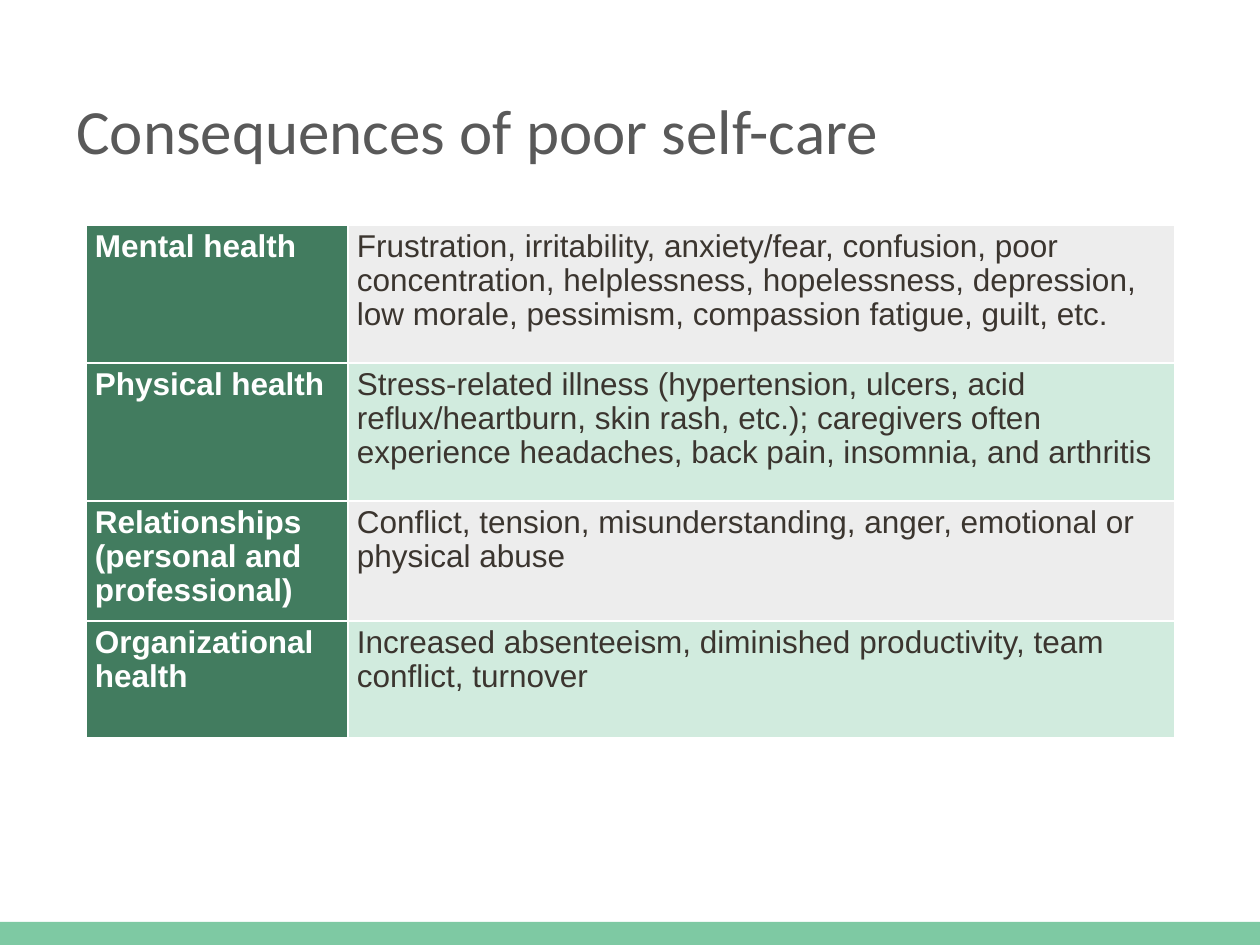
from dataclasses import dataclass

from lxml.etree import SubElement
from pptx import Presentation
from pptx.dml.color import RGBColor
from pptx.enum.shapes import MSO_SHAPE
from pptx.enum.text import MSO_ANCHOR
from pptx.oxml.ns import qn
from pptx.util import Emu, Pt

EMU_PER_PX = 914400 // 126


@dataclass(frozen=True)
class Theme:
    """Colours, fonts and type sizes of the slide."""
    band: str = "7EC9A3"
    title: str = "595959"
    label_fill: str = "427C5F"
    label_text: str = "FFFFFF"
    body_text: str = "3B352F"
    row_fills: tuple = ("EDEDED", "D1EBDE")
    border: str = "FFFFFF"
    title_font: str = "Calibri"
    table_font: str = "Arial"
    title_size: int = 36
    table_size: int = 18
    border_width: float = 1.5


THEME = Theme()
CONSEQUENCES = [
    ("Mental health",
     ["Frustration, irritability, anxiety/fear, confusion, poor concentration, "
      "helplessness, hopelessness, depression, low morale, pessimism, "
      "compassion fatigue, guilt, etc."]),
    ("Physical health",
     ["Stress-related illness (hypertension, ulcers, acid",
      "reflux/heartburn, skin rash, etc.); caregivers often experience "
      "headaches, back pain, insomnia, and arthritis"]),
    ("Relationships (personal and professional)",
     ["Conflict, tension, misunderstanding, anger, emotional or physical abuse"]),
    ("Organizational health",
     ["Increased absenteeism, diminished productivity, team",
      "conflict, turnover"]),
]


def px(length):
    """Turn pixels into EMU."""
    return Emu(length * EMU_PER_PX)


def write_text(frame, lines, *, font, size, color, bold=False, spacing=1.0):
    """Write each line as a formatted paragraph of the text frame."""
    frame.word_wrap = True
    for index, line in enumerate(lines):
        paragraph = frame.add_paragraph() if index else frame.paragraphs[0]
        paragraph.line_spacing = spacing
        run = paragraph.add_run()
        run.text = line
        run.font.name = font
        run.font.size = Pt(size)
        run.font.bold = bold
        run.font.color.rgb = RGBColor.from_string(color)


def add_footer_band(slide, left, top, width, height):
    """Draw the coloured band along the foot of the slide."""
    band = slide.shapes.add_shape(
        MSO_SHAPE.RECTANGLE, px(left), px(top), px(width), px(height))
    band.shadow.inherit = False
    band.fill.solid()
    band.fill.fore_color.rgb = RGBColor.from_string(THEME.band)
    band.line.fill.background()


def add_title(slide, left, top, width, height):
    """Place the slide title, centred vertically in its box."""
    frame = slide.shapes.add_textbox(
        px(left), px(top), px(width), px(height)).text_frame
    frame.vertical_anchor = MSO_ANCHOR.MIDDLE
    write_text(frame, ["Consequences of poor self-care"], font=THEME.title_font,
               size=THEME.title_size, color=THEME.title)


def add_borders(cell):
    """Give all four sides of a cell the theme border."""
    properties = cell._tc.get_or_add_tcPr()
    for position, side in enumerate(("a:lnL", "a:lnR", "a:lnT", "a:lnB")):
        line = SubElement(properties, qn(side), w=str(Pt(THEME.border_width)))
        fill = SubElement(line, qn("a:solidFill"))
        SubElement(fill, qn("a:srgbClr"), val=THEME.border)
        properties.insert(position, line)


def format_cell(cell, lines, *, fill, color, bold=False):
    """Fill, border and write one table cell."""
    cell.margin_left = cell.margin_right = px(9)
    cell.margin_top = cell.margin_bottom = px(5)
    cell.fill.solid()
    cell.fill.fore_color.rgb = RGBColor.from_string(fill)
    add_borders(cell)
    write_text(cell.text_frame, lines, font=THEME.table_font,
               size=THEME.table_size, color=color, bold=bold, spacing=0.97)


def add_consequences_table(slide, left, top, width, row_heights, label_width):
    """Build the table of areas of health and their consequences."""
    table = slide.shapes.add_table(
        len(CONSEQUENCES), 2, px(left), px(top), px(width),
        px(sum(row_heights))).table
    table.columns[0].width = px(label_width)
    table.columns[1].width = px(width - label_width)
    for index, (label, effects) in enumerate(CONSEQUENCES):
        table.rows[index].height = px(row_heights[index])
        format_cell(table.cell(index, 0), [label], fill=THEME.label_fill,
                    color=THEME.label_text, bold=True)
        format_cell(table.cell(index, 1), effects,
                    fill=THEME.row_fills[index % 2], color=THEME.body_text)


def main():
    """Build and save the slide."""
    presentation = Presentation()
    presentation.slide_width, presentation.slide_height = px(1260), px(945)
    slide = presentation.slides.add_slide(presentation.slide_layouts[6])
    add_footer_band(slide, 0, 922, 1266, 26)
    add_title(slide, 64, 62, 1133, 134)
    add_consequences_table(slide, 86, 225, 1089, (138, 138, 115, 117), 262)
    presentation.save("out.pptx")


if __name__ == "__main__":
    main()
